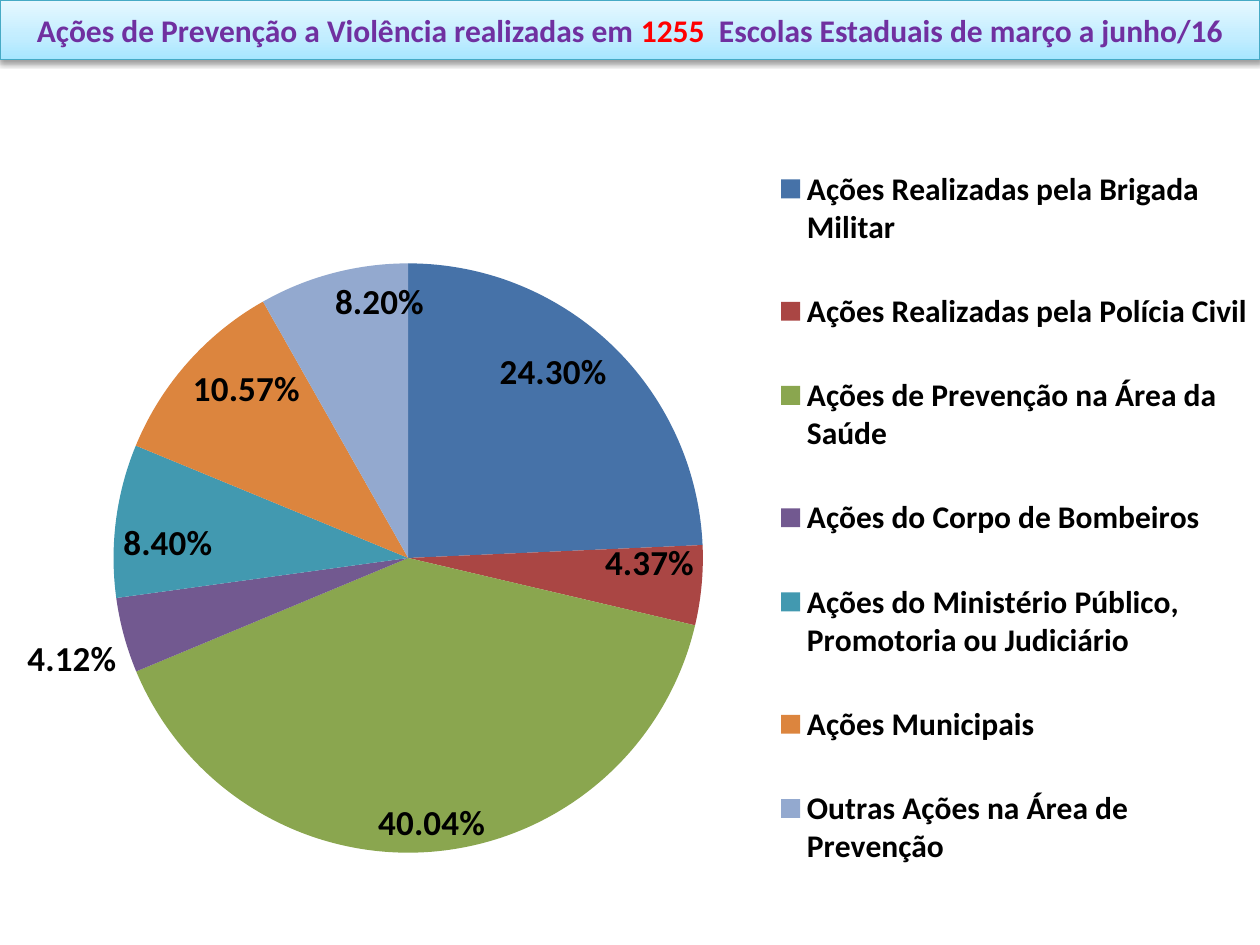
from copy import deepcopy

from lxml import etree
from pptx import Presentation
from pptx.chart.data import CategoryChartData
from pptx.dml.color import RGBColor
from pptx.enum.chart import XL_CHART_TYPE, XL_LABEL_POSITION, XL_LEGEND_POSITION
from pptx.enum.shapes import MSO_SHAPE
from pptx.enum.text import MSO_ANCHOR, PP_ALIGN
from pptx.oxml import parse_xml
from pptx.oxml.ns import nsdecls, qn
from pptx.util import Inches, Pt

TITLE = [
    ("Ações de Prevenção a Violência realizadas em ", "7030A0"),
    ("1255  ", "FF0000"),
    ("Escolas Estaduais de março a junho/16", "7030A0"),
]
ACTIONS = [
    ("Ações Realizadas pela Brigada Militar", 0.243, "4672A8"),
    ("Ações Realizadas pela Polícia Civil", 0.0437, "AA4644"),
    ("Ações de Prevenção na Área da Saúde", 0.4004, "8AA64F"),
    ("Ações do Corpo de Bombeiros", 0.0412, "725990"),
    ("Ações do Ministério Público, Promotoria ou Judiciário", 0.084, "4299B0"),
    ("Ações Municipais", 0.1057, "DC853E"),
    ("Outras Ações na Área de Prevenção", 0.082, "93A9CF"),
]
OUTSIDE_LABEL = 3  # the slice too narrow for its label


def rgb(value):
    return RGBColor.from_string(value)


class SlideBuilder:
    font_name = "Calibri"

    def __init__(self, deck):
        self.deck = deck
        self.page = deck.slides.add_slide(deck.slide_layouts[6])

    def area(self, left, top, width, height):
        """Turn shares of the slide's size into lengths."""
        across, down = self.deck.slide_width, self.deck.slide_height
        return int(left * across), int(top * down), int(width * across), int(height * down)

    def style(self, font, size, color="000000", bold=True):
        font.name, font.size, font.bold = self.font_name, Pt(size), bold
        font.color.rgb = rgb(color)

    def banner(self, shares, spans, stops, line):
        box = self.page.shapes.add_shape(MSO_SHAPE.RECTANGLE, *self.area(*shares))
        self.gradient(box, stops)
        box.line.color.rgb, box.line.width = rgb(line), Pt(0.75)
        self.drop_shadow(box)
        frame = box.text_frame
        frame.word_wrap = True
        frame.vertical_anchor = MSO_ANCHOR.MIDDLE
        para = frame.paragraphs[0]
        para.alignment = PP_ALIGN.CENTER
        for text, color in spans:
            span = para.add_run()
            span.text = text
            self.style(span.font, 18, color)

    def gradient(self, box, stops):
        box.fill.gradient()
        box.fill.gradient_angle = 90
        stop_list = box.fill.gradient_stops[0]._gs.getparent()
        stop_list.append(deepcopy(stop_list[-1]))  # a third stop
        for stop, (position, color) in zip(box.fill.gradient_stops, stops):
            stop.position, stop.color.rgb = position, rgb(color)

    def drop_shadow(self, box):
        box.shadow.inherit = False
        box._element.spPr.find(qn("a:effectLst")).append(parse_xml(
            f'<a:outerShdw {nsdecls("a")} blurRad="{Pt(3.1)}" dist="{Pt(1.6)}" '
            'dir="5400000" rotWithShape="0"><a:srgbClr val="000000">'
            '<a:alpha val="38000"/></a:srgbClr></a:outerShdw>'))

    def pie(self, shares, rows, plot_place, legend_place):
        data = CategoryChartData(number_format="0.00%")
        data.categories = [name for name, _, _ in rows]
        data.add_series("Series 1", [value for _, value, _ in rows])
        chart = self.page.shapes.add_chart(
            XL_CHART_TYPE.PIE, *self.area(*shares), data).chart
        chart.has_title = False
        self.style(chart.font, 10, bold=False)

        # Slices
        plot = chart.plots[0]
        plot.vary_by_categories = True
        series = plot.series[0]
        for index, (_, _, color) in enumerate(rows):
            fill = series.points[index].format.fill
            fill.solid()
            fill.fore_color.rgb = rgb(color)

        # Labels
        labels = series.data_labels
        labels.show_value, labels.show_percentage = True, False
        labels.number_format, labels.number_format_is_linked = "0.00%", False
        labels.position = XL_LABEL_POSITION.INSIDE_END
        self.style(labels.font, 20)
        outside = series.points[OUTSIDE_LABEL].data_label
        self.style(outside.font, 20)
        outside.position = XL_LABEL_POSITION.OUTSIDE_END

        # Legend
        chart.has_legend = True
        legend = chart.legend
        legend.position = XL_LEGEND_POSITION.RIGHT
        legend.include_in_layout = False
        self.style(legend.font, 18)

        self.place(chart._chartSpace.chart.plotArea, plot_place, inner=True)
        self.place(legend._element, legend_place)

    def place(self, part, shares, inner=False):
        """Fix a chart part at shares of the chart's size."""
        layout = part.find(qn("c:layout"))
        if layout is None:
            layout = etree.Element(qn("c:layout"))
            before = part.find(qn("c:legendPos"))
            part.insert(0 if before is None else part.index(before) + 1, layout)
        for child in list(layout):
            layout.remove(child)
        manual = etree.SubElement(layout, qn("c:manualLayout"))
        settings = [("layoutTarget", "inner")] if inner else []
        settings += [("xMode", "edge"), ("yMode", "edge")]
        settings += zip("xywh", map(str, shares))
        for tag, value in settings:
            etree.SubElement(manual, qn(f"c:{tag}")).set("val", value)


def main():
    deck = Presentation()
    deck.slide_width, deck.slide_height = Inches(10), Inches(7.5)
    slide = SlideBuilder(deck)

    # Title banner
    slide.banner((0, 0, 1, 0.063), TITLE,
                 [(0, "A7E6FF"), (0.35, "C1EDFF"), (1, "E7F8FF")], "46AAC5")

    # Share of each kind of action
    slide.pie((0, 0.093, 1, 0.948), ACTIONS,
              plot_place=(0.09, 0.196, 0.468, 0.658),
              legend_place=(0.61, 0.04, 0.39, 0.88))

    deck.save("out.pptx")


if __name__ == "__main__":
    main()
